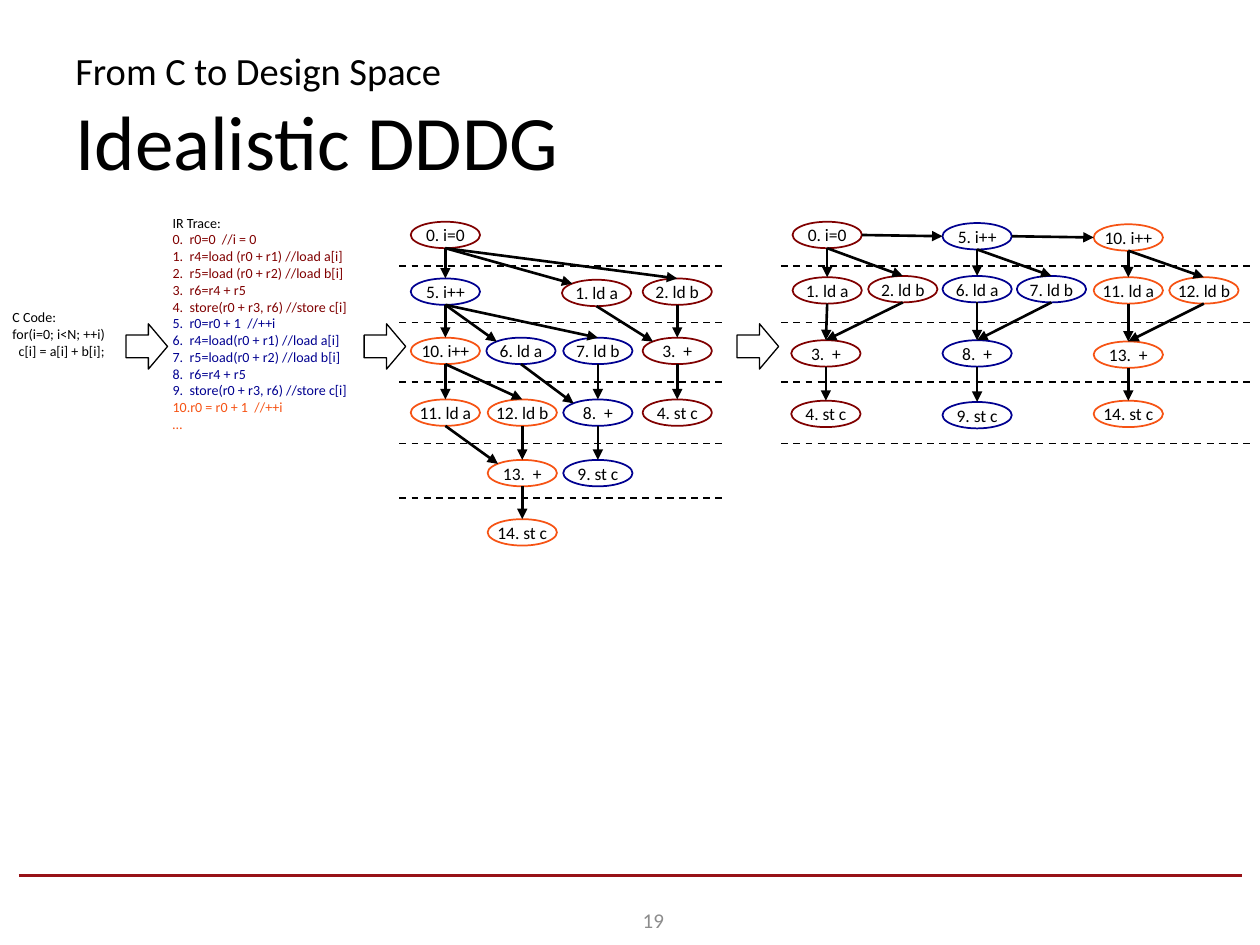
import pptx
import pptx.util
import pptx.dml.color
import pptx.enum.dml
import pptx.enum.shapes
import pptx.enum.text
import pptx.oxml.ns
from dataclasses import dataclass
from lxml import etree

PX = 9144  # 100 px to the inch
SHAPE = pptx.enum.shapes.MSO_SHAPE
ALIGN = pptx.enum.text.PP_ALIGN
MIDDLE = pptx.enum.text.MSO_ANCHOR.MIDDLE


@dataclass
class Theme:
    font: str = "Calibri"
    black: str = "000000"
    white: str = "FFFFFF"
    grey: str = "8C8C8C"
    rule: str = "971217"
    iterations: tuple = ("800000", "000090", "F65314")
    code: int = 8
    node: int = 10
    number: int = 12
    subtitle: int = 22
    title: int = 44


theme = Theme()
rgb = pptx.dml.color.RGBColor.from_string


def add_line(shapes, start, end, color, width, dashed=False, arrow=False):
    s = shapes.add_connector(pptx.enum.shapes.MSO_CONNECTOR.STRAIGHT,
                             *(round(v * PX) for v in (*start, *end)))
    s.line.color.rgb = rgb(color)
    s.line.width = pptx.util.Pt(width)
    if dashed:
        s.line.dash_style = pptx.enum.dml.MSO_LINE.DASH
    if arrow:
        etree.SubElement(s.line._get_or_add_ln(), pptx.oxml.ns.qn("a:tailEnd"), type="triangle")
    etree.SubElement(s._element.spPr, pptx.oxml.ns.qn("a:effectLst"))


def add_run(p, text, size, color):
    r = p.add_run()
    r.text = text
    r.font.name = theme.font
    r.font.size = pptx.util.Pt(size)
    r.font.color.rgb = rgb(color)


prs = pptx.Presentation()
prs.slide_width, prs.slide_height = 1000 * PX, 750 * PX
slide = prs.slides.add_slide(prs.slide_layouts[6])

add_line(slide.shapes, (15, 695), (986, 695), theme.rule, 2)

# Title
tf = slide.shapes.add_textbox(50 * PX, 30 * PX, 900 * PX, 125 * PX).text_frame
tf.word_wrap = True
tf.vertical_anchor = MIDDLE
p = tf.paragraphs[0]
add_run(p, "From C to Design Space", theme.subtitle, theme.black)
p.add_line_break()
add_run(p, "Idealistic DDDG", theme.title, theme.black)

# Slide number
tf = slide.shapes.add_textbox(402 * PX, 710 * PX, 233 * PX, 40 * PX).text_frame
tf.word_wrap = True
tf.vertical_anchor = MIDDLE
p = tf.paragraphs[0]
p.alignment = ALIGN.CENTER
add_run(p, "19", theme.number, theme.grey)

# C code and its instruction trace
dark, blue, orange = theme.iterations
c_code = [(line, theme.black) for line in
          ("C Code:", "for(i=0; i<N; ++i)", "  c[i] = a[i] + b[i];")]
trace = [
    ("IR Trace:", theme.black),
    ("0.  r0=0  //i = 0", dark),
    ("1.  r4=load (r0 + r1) //load a[i]", dark),
    ("2.  r5=load (r0 + r2) //load b[i]", dark),
    ("3.  r6=r4 + r5", dark),
    ("4.  store(r0 + r3, r6) //store c[i]", dark),
    ("5.  r0=r0 + 1  //++i", blue),
    ("6.  r4=load(r0 + r1) //load a[i]", blue),
    ("7.  r5=load(r0 + r2) //load b[i]", blue),
    ("8.  r6=r4 + r5", blue),
    ("9.  store(r0 + r3, r6) //store c[i]", blue),
    ("10.r0 = r0 + 1  //++i", orange),
    ("…", orange),
]
for box, inset, lines in (((0, 240, 112, 50), (10, 5), c_code),
                          ((137, 170, 196, 175), (0, 0), trace)):
    tf = slide.shapes.add_textbox(*(v * PX for v in box)).text_frame
    tf.word_wrap = True
    tf.margin_left = tf.margin_right = inset[0] * PX
    tf.margin_top = tf.margin_bottom = inset[1] * PX
    for i, (text, color) in enumerate(lines):
        p = tf.add_paragraph() if i else tf.paragraphs[0]
        add_run(p, text, theme.code, color)

# Dependence graphs: node -> left, top; edges carry their entry side
labels = ["0. i=0", "1. ld a", "2. ld b", "3.  +", "4. st c",
          "5. i++", "6. ld a", "7. ld b", "8.  +", "9. st c",
          "10. i++", "11. ld a", "12. ld b", "13.  +", "14. st c"]
NODE_W, NODE_H = 55, 21
step_lines = [211, 256, 303, 352, 395]
packed = {
    "nodes": {0: (326, 176), 5: (326, 221), 10: (326, 268), 11: (326, 317),
              12: (387, 317), 13: (387, 365), 14: (387, 412), 6: (386, 268),
              7: (447, 268), 8: (447, 317), 9: (447, 365), 1: (446, 222),
              2: (510, 221), 3: (510, 268), 4: (510, 317)},
    "top": [(0, 2), (2, 3), (3, 4), (0, 5), (5, 7), (7, 8), (8, 9), (5, 10),
            (10, 11), (10, 12), (12, 13), (13, 14)],
    "corner": [(0, 1), (1, 3), (5, 6), (6, 8), (11, 13)],
    "side": [],
    "steps": (317, 574, step_lines),
}
by_iteration = {
    "nodes": {0: (629, 176), 5: (748, 177), 10: (868, 178), 11: (868, 220),
              12: (928, 220), 13: (868, 271), 14: (868, 318), 6: (748, 219),
              7: (807, 219), 8: (748, 270), 9: (748, 319), 1: (629, 220),
              2: (689, 219), 3: (628, 270), 4: (628, 318)},
    "top": [(first + a, first + b) for first in (0, 5, 10)
            for a, b in ((0, 1), (0, 2), (1, 3), (2, 3), (3, 4))],
    "corner": [],
    "side": [(0, 5), (5, 10)],
    "steps": (620, 992, step_lines[:4]),
}
exits = {"top": (0.5, 1), "corner": (0.5, 1), "side": (1, 0.5)}
entries = {"top": (0.5, 0), "corner": (0.15, 0.15), "side": (0, 0.5)}

group = slide.shapes.add_group_shape().shapes
for shapes, arrows, graph in ((slide.shapes, (100, 289), packed),
                              (group, (585,), by_iteration)):
    for left in arrows:
        s = shapes.add_shape(SHAPE.RIGHT_ARROW, left * PX, 257 * PX, 33 * PX, 36 * PX)
        s.adjustments[1] = 0.46
        s.shadow.inherit = False
        s.fill.solid()
        s.fill.fore_color.rgb = rgb(theme.white)
        s.line.color.rgb = rgb(theme.black)
        s.line.width = pptx.util.Pt(0.75)

    nodes = graph["nodes"]
    for n, (left, top) in nodes.items():
        s = shapes.add_shape(SHAPE.OVAL, left * PX, top * PX, NODE_W * PX, NODE_H * PX)
        s.shadow.inherit = False
        s.fill.solid()
        s.fill.fore_color.rgb = rgb(theme.white)
        s.line.color.rgb = rgb(theme.iterations[n // 5])
        s.line.width = pptx.util.Pt(1)
        tf = s.text_frame
        tf.margin_left = tf.margin_right = tf.margin_top = tf.margin_bottom = 0
        tf.word_wrap = False
        tf.vertical_anchor = MIDDLE
        p = tf.paragraphs[0]
        p.alignment = ALIGN.CENTER
        add_run(p, labels[n], theme.node, theme.black)

    for side in entries:
        for a, b in graph[side]:
            start, end = ((nodes[n][0] + fx * NODE_W, nodes[n][1] + fy * NODE_H)
                          for n, (fx, fy) in ((a, exits[side]), (b, entries[side])))
            add_line(shapes, start, end, theme.black, 1.5, arrow=True)

    left, right, heights = graph["steps"]
    for y in heights:
        add_line(shapes, (left, y), (right, y), theme.black, 1, dashed=True)

prs.save("out.pptx")
